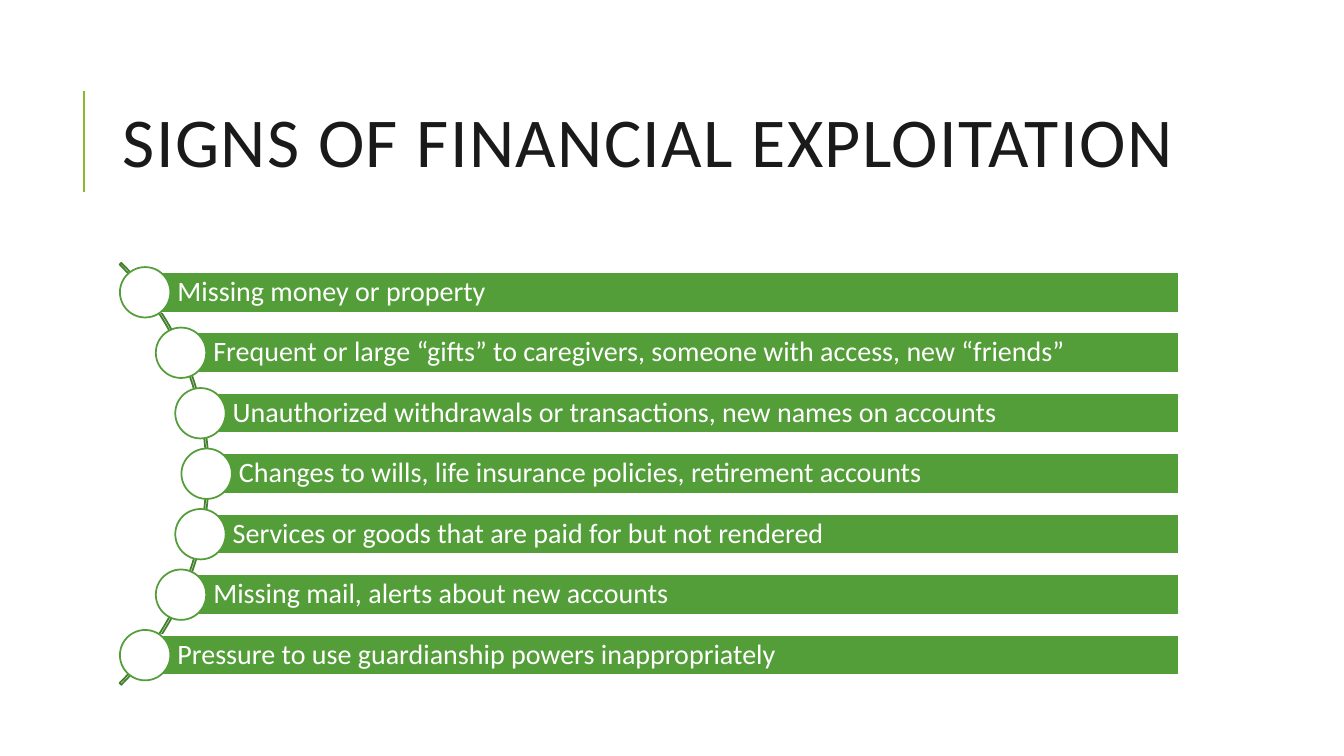
"""Build the slide on signs of financial exploitation: bars hung along an arc."""
import math

import pptx
import pptx.dml.color
import pptx.enum.shapes
import pptx.enum.text
import pptx.oxml
import pptx.util

TITLE = "SIGNS OF FINANCIAL EXPLOITATION"
SIGNS = [
    "Missing money or property",
    "Frequent or large “gifts” to caregivers, someone with access, new “friends”",
    "Unauthorized withdrawals or transactions, new names on accounts",
    "Changes to wills, life insurance policies, retirement accounts",
    "Services or goods that are paid for but not rendered",
    "Missing mail, alerts about new accounts",
    "Pressure to use guardianship powers inappropriately",
]
COLORS = {"accent": "8AB833", "green": "549E39", "arc": "437F2E",
          "white": "FFFFFF", "title": "1A1A1A"}
FONT = "Calibri"
WIDTH, HEIGHT = 13.33, 7.5
RADIUS, ARC_X, MID_Y = 2.96, -0.89, 4.7
PITCH, BAR_H, DOT, RIGHT = 0.6, 0.4, 0.5, 11.69
DOT_SHIFT = 0.02
SHAPE = pptx.enum.shapes.MSO_SHAPE
inch = pptx.util.Inches


def rgb(name):
    return pptx.dml.color.RGBColor.from_string(COLORS[name])


def add_shape(s, kind, box, fill, line):
    sp = s.shapes.add_shape(kind, *map(inch, box))
    sp.shadow.inherit = False
    if fill:
        sp.fill.solid()
        sp.fill.fore_color.rgb = rgb(fill)
    else:
        sp.fill.background()
    sp.line.color.rgb = rgb(line)
    sp.line.width = pptx.util.Pt(1.25)
    return sp


def write(sp, text, size, color, spacing, insets):
    tf = sp.text_frame
    tf.word_wrap = True
    tf.vertical_anchor = pptx.enum.text.MSO_ANCHOR.MIDDLE
    tf.margin_left, tf.margin_top, tf.margin_right, tf.margin_bottom = map(inch, insets)
    p = tf.paragraphs[0]
    p.text = text
    p.alignment = pptx.enum.text.PP_ALIGN.LEFT
    p.line_spacing = spacing
    r = p.runs[0]
    r.font.name, r.font.size = FONT, pptx.util.Pt(size)
    r.font.color.rgb = rgb(color)
    return r


def add_title(s):
    rule = s.shapes.add_connector(pptx.enum.shapes.MSO_CONNECTOR.STRAIGHT,
                                  inch(0.83), inch(1.9), inch(0.83), inch(0.9))
    rule.line.color.rgb = rgb("accent")
    rule.line.width = pptx.util.Pt(1.5)
    rule._element.spPr.append(pptx.oxml.parse_xml(
        '<a:effectLst xmlns:a="http://schemas.openxmlformats.org/drawingml/2006/main"/>'))
    box = s.shapes.add_textbox(*map(inch, (1.12, 0.64, 10.63, 1.64)))
    r = write(box, TITLE, 50, "title", 0.8, (0.1, 0.05, 0.1, 0.05))
    r.font._element.set("spc", "100")


def add_signs(s):
    arc = add_shape(s, SHAPE.BLOCK_ARC,
                    (ARC_X - RADIUS, MID_Y - RADIUS, 2 * RADIUS, 2 * RADIUS), None, "arc")
    for i, value in enumerate((189, 27, 0.004)):
        arc.adjustments[i] = value
    for i, sign in enumerate(SIGNS):
        dy = (i - (len(SIGNS) - 1) / 2) * PITCH
        x, y = ARC_X - DOT_SHIFT + math.sqrt(RADIUS ** 2 - dy ** 2), MID_Y + dy
        bar = add_shape(s, SHAPE.RECTANGLE, (x, y - BAR_H / 2, RIGHT - x, BAR_H),
                        "green", "white")
        write(bar, sign, 20, "white", 0.9, (0.32, 0.06, 0.06, 0.06))
        add_shape(s, SHAPE.OVAL, (x - DOT / 2, y - DOT / 2, DOT, DOT), "white", "green")


def main():
    prs = pptx.Presentation()
    prs.slide_width, prs.slide_height = inch(WIDTH), inch(HEIGHT)
    s = prs.slides.add_slide(prs.slide_layouts[6])
    add_title(s)
    add_signs(s)
    prs.save("out.pptx")


if __name__ == "__main__":
    main()
